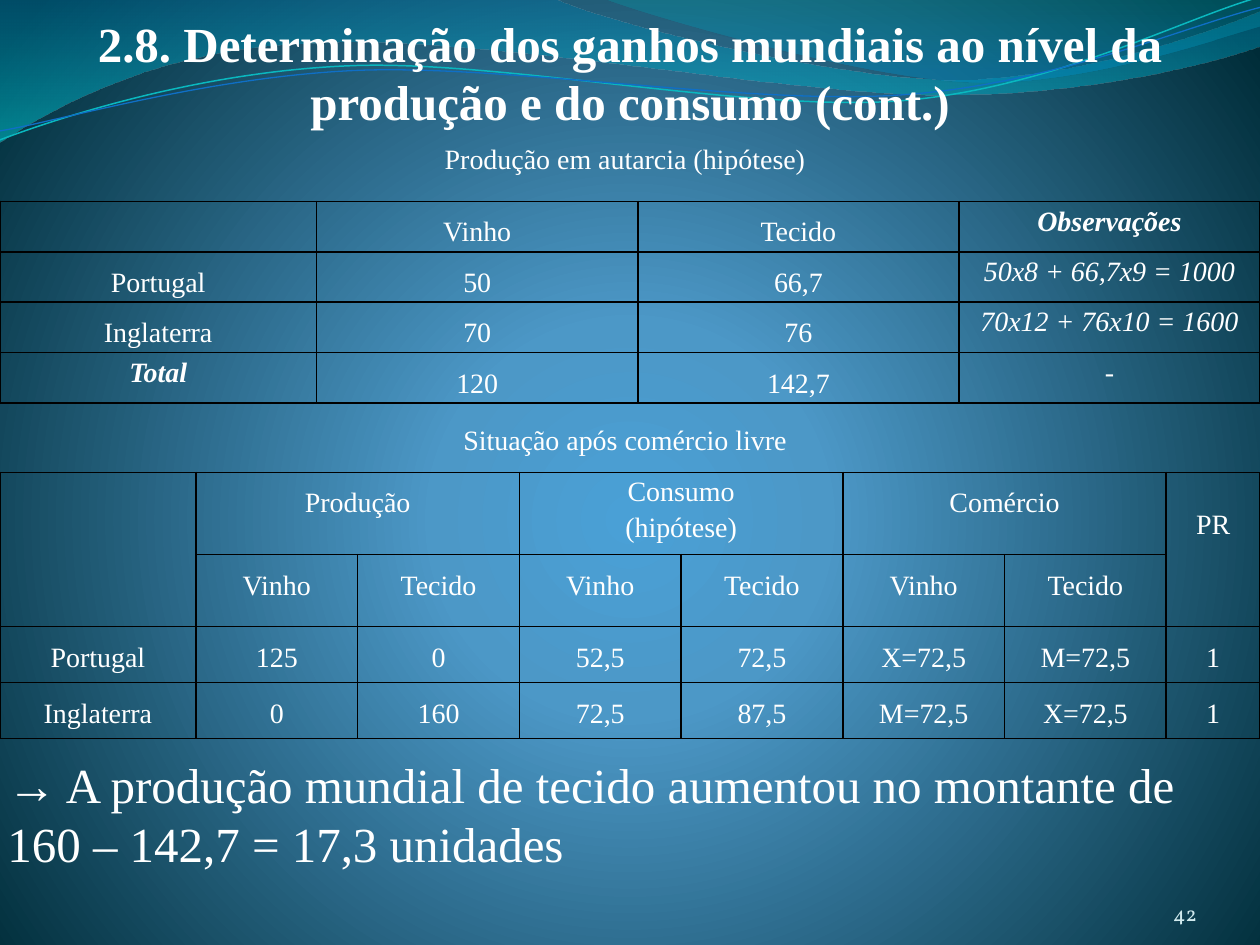
from lxml import etree
from pptx import Presentation
from pptx.dml.color import RGBColor
from pptx.enum.text import MSO_ANCHOR, PP_ALIGN
from pptx.oxml import parse_xml
from pptx.oxml.ns import nsdecls, qn
from pptx.util import Cm, Pt

CENTER, LEFT, RIGHT = PP_ALIGN.CENTER, PP_ALIGN.LEFT, PP_ALIGN.RIGHT
TOP, MIDDLE, BOTTOM = MSO_ANCHOR.TOP, MSO_ANCHOR.MIDDLE, MSO_ANCHOR.BOTTOM

COLORS = {
    "text": "FFFFFF", "number": "D1EAEE", "border": "000000",
    "glow": "4AA0D6", "mid": "4C98C7", "edge": "002C38",
    "wave_blue": "0074A1", "wave_cyan": "00C6CF",
    "crest_teal": "00A1A9", "crest_blue": "008BBF",
    "line_teal": "0AB8BF", "line_blue": "0F6FC6",
}
BODY_FONT, NUMBER_FONT = "Times New Roman", "Vollkorn"

# Gradient stops: position %, colour, opacity %
BACKGROUND = [(0, "glow", 100), (25, "mid", 100), (100, "edge", 100)]
RADIAL = '<a:path path="circle"><a:fillToRect l="10000" t="110000" r="10000" b="100000"/></a:path>'
DOWNWARD = '<a:lin ang="5400000" scaled="0"/>'

# Outlines in cm: two numbers make a straight step, six a Bézier curve
FILLED_WAVES = [
    ([(0, 0), (11.18, -0.03), (12.09, 0.43, 16.87, 1.6, 19.25, 1.6),
      (21.67, 1.6, 24.33, 0.66, 25.4, 0.23), (25.43, 0.91),
      (24.97, 1.12, 22.1, 1.93, 18.95, 1.91), (15.8, 1.91, 9.7, 0.71, 6.53, 0.86),
      (3.28, 0.91, 1.17, 2.11, -0.03, 2.87), (0, 0)],
     [(0, "wave_blue", 45), (100, "wave_cyan", 55)]),
    ([(12.17, -0.03), (12.93, 0.28, 17.32, 1.57, 19.53, 1.65),
      (21.74, 1.75, 24.41, 0.81, 25.4, 0.53), (25.4, 0), (12.17, -0.03)],
     [(0, "crest_teal", 30), (80, "crest_blue", 45)]),
]
WAVE_LINES = [
    ([(-0.05, 2.22), (1.19, 1.82, 4.02, 1.04, 7.05, 1.06),
      (10.05, 1.07, 15.02, 2.37, 18.08, 2.29), (21.13, 2.2, 23.87, 0.91, 25.41, 0.55)],
     "line_teal", 0.85),
    ([(-0.04, 2.04), (1.16, 1.9, 4.18, 1.15, 7.2, 1.16),
      (10.25, 1.18, 15.13, 2.25, 18.18, 2.17), (21.21, 2.1, 23.93, 1.06, 25.45, 0.75)],
     "line_blue", 0.75),
]
LINE_ROTATION = 357.3

# Text, (left, top, width, height) in cm, format
TEXTS = [
    ("2.8. Determinação dos ganhos mundiais ao nível da produção e do consumo (cont.)",
     (0.05, 0.13, 25.3, 2.64), dict(size=28, bold=True, anchor=MIDDLE)),
    ("Produção em autarcia (hipótese)", (-0.1, 2.72, 25.4, 0.94), {}),
    ("Situação após comércio livre", (-0.1, 8.38, 25.4, 0.94), {}),
    ("→ A produção mundial de tecido aumentou no montante de 160 – 142,7 = 17,3 unidades",
     (-0.1, 15.08, 25.4, 2.64), dict(size=28, align=LEFT)),
    ("42", (22.02, 17.65, 2.11, 1.02),
     dict(size=12, font=NUMBER_FONT, color="number", align=RIGHT, anchor=BOTTOM,
          margins=(0, 0, 0, 0))),
]

CELL = dict(spacing=1.5, gap=6, margins=(0.18, 0, 0.18, 0))
NOTE = dict(spacing=1.15, italic=True)
STRONG = dict(NOTE, bold=True)
COMPACT = dict(spacing=1.15, gap=0)
AUTARKY = dict(
    top=4.06, columns=[6.38, 6.48, 6.47, 6.07], heights=[1.01] * 4, merges=[],
    rows=[["", "Vinho", "Tecido", "Observações"],
          ["Portugal", "50", "66,7", "50x8 + 66,7x9 = 1000"],
          ["Inglaterra", "70", "76", "70x12 + 76x10 = 1600"],
          ["Total", "120", "142,7", "-"]],
    formats={(0, 3): STRONG, (1, 3): NOTE, (2, 3): NOTE, (3, 3): NOTE, (3, 0): STRONG})
FREE_TRADE = dict(
    top=9.52, columns=[3.95] + [3.26] * 6 + [1.89], heights=[1.66, 1.45, 1.13, 1.13],
    merges=[(0, 0, 1, 0), (0, 1, 0, 2), (0, 3, 0, 4), (0, 5, 0, 6), (0, 7, 1, 7)],
    rows=[["", "Produção", "", "Consumo\n(hipótese)", "", "Comércio", "", "PR"],
          [""] + ["Vinho", "Tecido"] * 3 + [""],
          ["Portugal", "125", "0", "52,5", "72,5", "X=72,5", "M=72,5", "1"],
          ["Inglaterra", "0", "160", "72,5", "87,5", "M=72,5", "X=72,5", "1"]],
    formats={(0, 3): COMPACT, (0, 7): dict(COMPACT, margins=(0.18, 0.65, 0.18, 0))})


def rgb(name):
    return RGBColor.from_string(COLORS[name])


def write(holder, text, size=16, font=BODY_FONT, color="text", bold=False, italic=False,
          align=CENTER, anchor=TOP, spacing=None, gap=None, margins=(0.25, 0.13, 0.25, 0.13)):
    """Fill a text box or a table cell; margins run left, top, right, bottom."""
    holder.margin_left, holder.margin_top, holder.margin_right, holder.margin_bottom = map(Cm, margins)
    holder.vertical_anchor = anchor
    frame = getattr(holder, "text_frame", holder)
    frame.word_wrap = True
    frame.text = text
    for paragraph in frame.paragraphs:
        paragraph.alignment = align
        if spacing:
            paragraph.line_spacing = spacing
        if gap is not None:
            paragraph.space_before = paragraph.space_after = Pt(gap)
        for run in paragraph.runs:
            run.font.size, run.font.name = Pt(size), font
            run.font.bold, run.font.italic = bold, italic
            run.font.color.rgb = rgb(color)


def paint_gradient(fill, properties, stops, direction):
    """Swap the solid fill inside the properties element for a gradient."""
    fill.solid()
    marks = "".join(
        f'<a:gs pos="{position * 1000}"><a:srgbClr val="{COLORS[name]}">'
        f'<a:alpha val="{opacity * 1000}"/></a:srgbClr></a:gs>'
        for position, name, opacity in stops)
    gradient = parse_xml(f'<a:gradFill {nsdecls("a")} rotWithShape="1">'
                         f'<a:gsLst>{marks}</a:gsLst>{direction}</a:gradFill>')
    properties.replace(properties.find(qn("a:solidFill")), gradient)


def add_wave(slide, outline, closed):
    """Build the outline from straight steps, then join each curve's three steps."""
    start, *steps = outline
    points = [(Cm(x), Cm(y)) for step in steps for x, y in zip(step[::2], step[1::2])]
    builder = slide.shapes.build_freeform(*map(Cm, start))
    builder.add_line_segments(points, close=closed)
    wave = builder.convert_to_shape()
    wave.shadow.inherit = False
    segments = iter(list(wave.element.iter(qn("a:lnTo"))))
    for step in steps:
        corners = [next(segments) for _ in step[::2]]
        if len(corners) == 3:
            curve = etree.Element(qn("a:cubicBezTo"))
            corners[0].addprevious(curve)
            for corner in corners:
                curve.append(corner[0])
                corner.getparent().remove(corner)
    return wave


def add_borders(cell):
    properties = cell._tc.get_or_add_tcPr()
    for index, side in enumerate(("lnL", "lnR", "lnT", "lnB")):
        line = etree.Element(qn(f"a:{side}"), w=str(Pt(1)))
        fill = etree.SubElement(line, qn("a:solidFill"))
        etree.SubElement(fill, qn("a:srgbClr"), val=COLORS["border"])
        properties.insert(index, line)


def add_grid(slide, top, columns, heights, merges, rows, formats):
    table = slide.shapes.add_table(len(rows), len(columns), Cm(0), Cm(top),
                                   Cm(sum(columns)), Cm(sum(heights))).table
    table.first_row = table.horz_banding = False
    for column, width in zip(table.columns, columns):
        column.width = Cm(width)
    for row, height in zip(table.rows, heights):
        row.height = Cm(height)
    for r, row in enumerate(rows):
        for c, text in enumerate(row):
            cell = table.cell(r, c)
            write(cell, text, **{**CELL, **formats.get((r, c), {})})
            cell.fill.background()
            add_borders(cell)
    for first_row, first_column, last_row, last_column in merges:
        table.cell(first_row, first_column).merge(table.cell(last_row, last_column))


def main():
    deck = Presentation()
    deck.slide_width, deck.slide_height = Cm(25.4), Cm(19.05)
    slide = deck.slides.add_slide(deck.slide_layouts[6])
    background = slide.background.fill
    background.solid()
    paint_gradient(background, slide.element.find(f".//{qn('p:bgPr')}"), BACKGROUND, RADIAL)

    for outline, stops in FILLED_WAVES:
        wave = add_wave(slide, outline, closed=True)
        paint_gradient(wave.fill, wave.element.spPr, stops, DOWNWARD)
        wave.line.fill.background()
    for outline, color, weight in WAVE_LINES:
        wave = add_wave(slide, outline, closed=False)
        wave.rotation = LINE_ROTATION
        wave.fill.background()
        wave.line.color.rgb = rgb(color)
        wave.line.width = Pt(weight)

    for text, place, style in TEXTS:
        write(slide.shapes.add_textbox(*map(Cm, place)).text_frame, text, **style)
    for grid in (AUTARKY, FREE_TRADE):
        add_grid(slide, **grid)
    deck.save("out.pptx")


if __name__ == "__main__":
    main()
